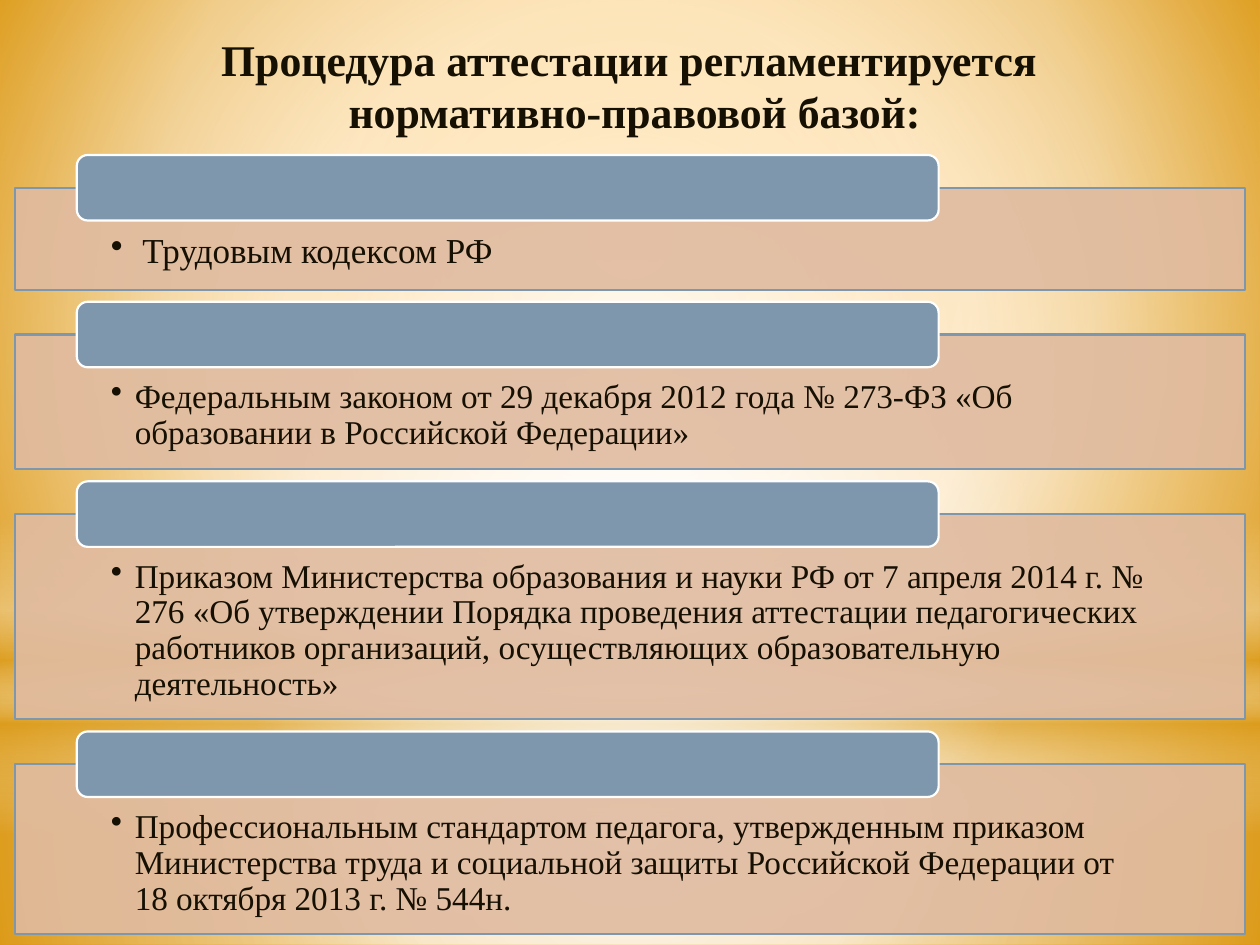
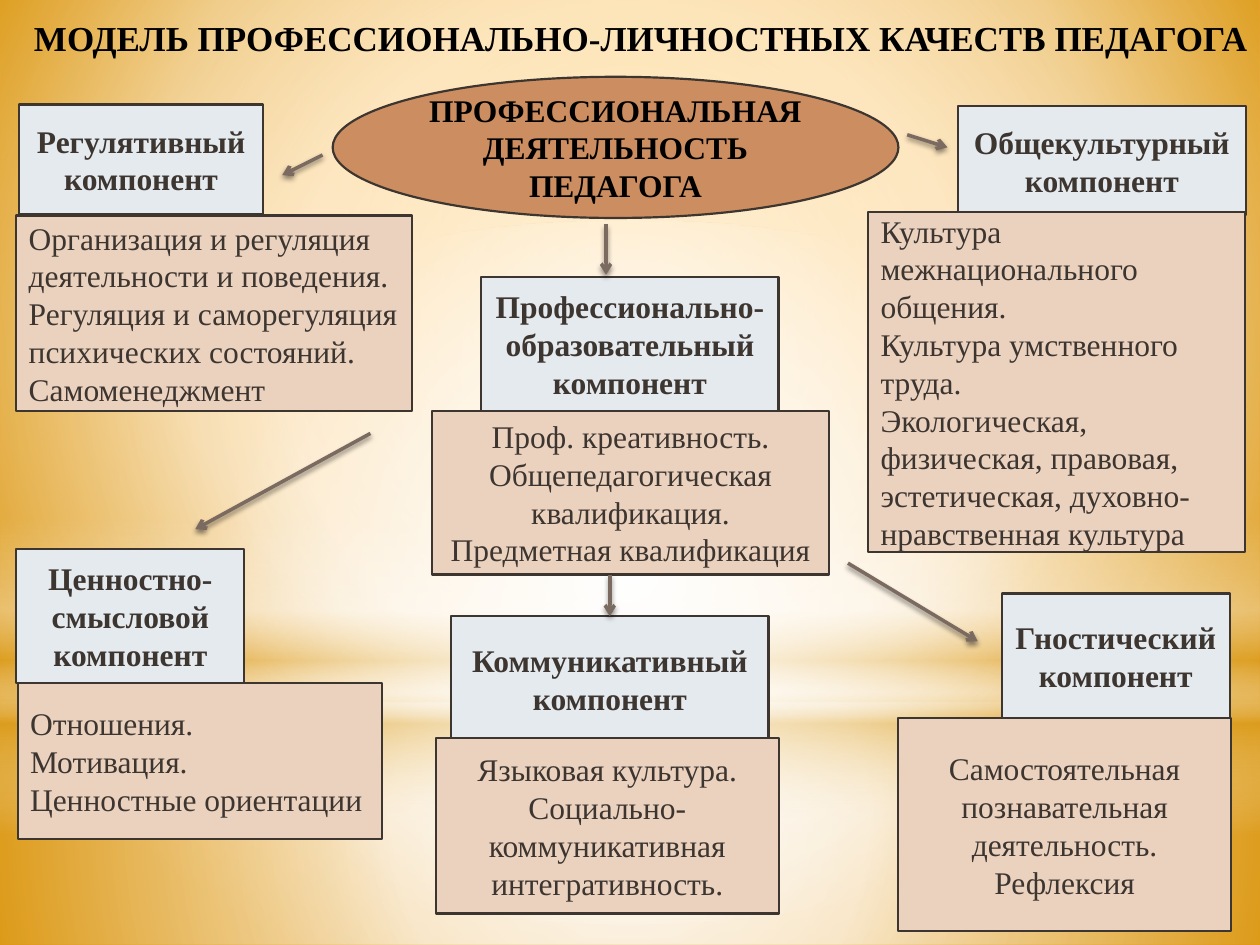
from pptx import Presentation
from pptx import util as u
from pptx.dml.color import RGBColor
from pptx.enum import shapes, text
from pptx.oxml import ns
from lxml import etree

COLUMNS, ROWS = 100, 75
FONT = "Times New Roman"
WHITE = RGBColor(0xFF, 0xFF, 0xFF)
BLACK = RGBColor(0x00, 0x00, 0x00)
INK = RGBColor(0x16, 0x10, 0x03)
BROWN = RGBColor(0x3D, 0x35, 0x30)
ARROW = RGBColor(0x7A, 0x6A, 0x60)
GOLD = RGBColor(0xDC, 0x9E, 0x1F)
AMBER = RGBColor(0xFF, 0xA6, 0x07)
CREAM = RGBColor(0xF9, 0xCD, 0x88)
OCHRE = RGBColor(0xE0, 0x8E, 0x02)
STEEL = RGBColor(0x7E, 0x97, 0xAD)
PEACH = RGBColor(0xE0, 0xBB, 0xA0)
COPPER = RGBColor(0xCC, 0x8E, 0x60)
PALE_BLUE = RGBColor(0xE5, 0xEA, 0xEF)
PALE_PEACH = RGBColor(0xEB, 0xD2, 0xBF)

RECTANGLE = shapes.MSO_SHAPE.RECTANGLE
ROUNDED = shapes.MSO_SHAPE.ROUNDED_RECTANGLE
OVAL = shapes.MSO_SHAPE.OVAL
LEFT, CENTER, RIGHT = text.PP_ALIGN.LEFT, text.PP_ALIGN.CENTER, text.PP_ALIGN.RIGHT
TOP, MIDDLE = text.MSO_ANCHOR.TOP, text.MSO_ANCHOR.MIDDLE

# Gradient stops: position %, colour, opacity %
BACKDROP = [(0, AMBER, 100), (60, CREAM, 100), (100, OCHRE, 100)]
BACKDROP_FOCUS = (20, 10, 20, 60)
MIDDLE_FOCUS = (50, 50, 50, 50)
BANDS = [
    (RECTANGLE, (0, 55.8, 100, 19.2), [(0, WHITE, 91), (37, WHITE, 76), (100, GOLD, 79)], MIDDLE_FOCUS),
    (RECTANGLE, (0, 0, 100, 55.8), [(0, WHITE, 89), (48, WHITE, 62), (100, GOLD, 79)], MIDDLE_FOCUS),
    (RECTANGLE, (0, 41.2, 100, 25),
     [(0, WHITE, 0), (29, WHITE, 30), (45, GOLD, 40), (55, WHITE, 26), (65, GOLD, 60), (100, WHITE, 0)], None),
    (OVAL, (0, 17.5, 100, 55.8), [(0, WHITE, 100), (56, WHITE, 0)], MIDDLE_FOCUS),
]

TITLE = {"size": u.Pt(25), "bold": True, "color": INK}
MODEL_TITLE = {"size": u.Pt(20), "bold": True, "color": BLACK}
HUB = {"size": u.Pt(18), "bold": True, "color": BLACK}
HEADING = {"size": u.Pt(18), "bold": True, "color": BROWN}
BODY = {"size": u.Pt(18), "bold": False, "color": BROWN}

# Panel height, text size, bullet indent, text
REGULATIONS = [
    (8.1, 20, 2.5, "Трудовым кодексом РФ"),
    (10.7, 19, 1.9, "Федеральным законом от 29 декабря 2012 года № 273-ФЗ «Об образовании "
                    "в Российской Федерации»"),
    (16.3, 19, 1.9, "Приказом Министерства образования и науки РФ от 7 апреля 2014 г. № 276 "
                    "«Об утверждении Порядка проведения аттестации педагогических работников "
                    "организаций, осуществляющих образовательную деятельность»"),
    (13.5, 19, 1.9, "Профессиональным стандартом педагога, утвержденным приказом Министерства "
                    "труда и социальной защиты Российской Федерации от 18 октября 2013 г. № 544н."),
]

# Heading, heading box, body box, body alignment, body paragraphs
COMPONENTS = [
    ("Регулятивный компонент", (1.5, 8.3, 19.4, 8.7), (1.3, 17.1, 31.4, 15.5), LEFT,
     ["Организация и регуляция деятельности и поведения.",
      "Регуляция и саморегуляция психических состояний.", "Самоменеджмент"]),
    ("Ценностно-смысловой компонент", (1.3, 43.6, 18.1, 10.6), (1.4, 54.2, 28.9, 12.4), LEFT,
     ["Отношения.", "Мотивация.", "Ценностные ориентации"]),
    ("Коммуникативный компонент", (35.8, 48.9, 25.2, 9.9), (34.6, 58.6, 27.2, 13.9), CENTER,
     ["Языковая культура.", "Социально-коммуникативная интегративность."]),
    ("Гностический компонент", (79.5, 47.1, 18.1, 9.9), (71.3, 57, 26.4, 16.9), CENTER,
     ["Самостоятельная познавательная деятельность.", "Рефлексия"]),
    ("Профессионально-образовательный компонент", (38.2, 22, 23.6, 10.6), (34.3, 32.6, 31.5, 13), CENTER,
     ["Проф. креативность.", "Общепедагогическая квалификация.", "Предметная квалификация"]),
    ("Общекультурный компонент", (76, 8.4, 22.9, 8.7), (68.9, 16.8, 29.9, 27), LEFT,
     ["Культура межнационального общения.", "Культура умственного труда.",
      "Экологическая, физическая, правовая, эстетическая, духовно-нравственная культура"]),
]

ARROWS = [
    (25.6, 12.3, 22.4, 13.9), (72, 10.7, 75.2, 11.7), (48.1, 17.8, 48.1, 21.8),
    (29.4, 34.4, 15.5, 42), (67.3, 44.7, 77.6, 50.9), (48.4, 45.6, 48.4, 48.9),
]


def add_element(parent, tag, **attributes):
    return etree.SubElement(parent, ns.qn(tag), {name: str(value) for name, value in attributes.items()})


def add_color(parent, color, opacity):
    element = add_element(parent, "a:srgbClr", val=color)
    if opacity < 100:
        add_element(element, "a:alpha", val=opacity * 1000)
    return element


def set_gradient(fill, owner, stops, focus):
    """Fill with a circular gradient around focus, or a vertical one without it."""
    fill.gradient()
    gradient = next(owner.iter(ns.qn("a:gradFill")))
    for child in list(gradient):
        gradient.remove(child)
    stop_list = add_element(gradient, "a:gsLst")
    for position, color, opacity in stops:
        add_color(add_element(stop_list, "a:gs", pos=position * 1000), color, opacity)
    if focus:
        circle = add_element(gradient, "a:path", path="circle")
        add_element(circle, "a:fillToRect", **{side: share * 1000 for side, share in zip("ltrb", focus)})
    else:
        add_element(gradient, "a:lin", ang=90 * 60000, scaled=0)


class Deck:
    def __init__(self):
        self.presentation = Presentation()
        self.presentation.slide_width = u.Inches(10)
        self.presentation.slide_height = u.Inches(7.5)
        self.slide = None

    def x(self, columns):
        return round(self.presentation.slide_width * columns / COLUMNS)

    def y(self, rows):
        return round(self.presentation.slide_height * rows / ROWS)

    def place(self, box):
        left, top, width, height = box
        return self.x(left), self.y(top), self.x(width), self.y(height)

    def add_slide(self):
        self.slide = self.presentation.slides.add_slide(self.presentation.slide_layouts[6])
        set_gradient(self.slide.background.fill, self.slide.element, BACKDROP, BACKDROP_FOCUS)
        for kind, box, stops, focus in BANDS:
            band = self.add_shape(kind, box)
            set_gradient(band.fill, band.element, stops, focus)

    def add_shape(self, kind, box, fill=None, line=None, opacity=100):
        shape = self.slide.shapes.add_shape(kind, *self.place(box))
        shape.shadow.inherit = False
        if fill is not None:
            shape.fill.solid()
            shape.fill.fore_color.rgb = fill
            if opacity < 100:
                color = next(shape.element.spPr.iter(ns.qn("a:srgbClr")))
                add_element(color, "a:alpha", val=opacity * 1000)
        if line is None:
            shape.line.fill.background()
        else:
            shape.line.color.rgb = line
            shape.line.width = u.Pt(1.25)
        return shape

    def add_text(self, shape, paragraphs, style, align=CENTER, anchor=MIDDLE, **frame_format):
        frame = shape.text_frame
        for name, value in {"word_wrap": True, "vertical_anchor": anchor, **frame_format}.items():
            setattr(frame, name, value)
        for index, words in enumerate(paragraphs):
            paragraph = frame.add_paragraph() if index else frame.paragraphs[0]
            paragraph.alignment = align
            run = paragraph.add_run()
            run.text = words
            run.font.name = FONT
            for name, value in style.items():
                if name == "color":
                    run.font.color.rgb = value
                else:
                    setattr(run.font, name, value)

    def add_title(self, box, paragraphs, style, align):
        self.add_text(self.slide.shapes.add_textbox(*self.place(box)), paragraphs, style, align, TOP)

    def add_bullet(self, shape, words, size, indent):
        self.add_text(shape, [words], {"size": u.Pt(size), "color": INK}, LEFT, TOP,
                      margin_left=self.x(7.6), margin_right=self.x(7.6),
                      margin_top=self.y(3.6), margin_bottom=self.y(1.5))
        paragraph = shape.text_frame.paragraphs[0]
        paragraph.line_spacing = 0.9
        properties = paragraph._p.get_or_add_pPr()
        properties.set("marL", str(self.x(indent)))
        properties.set("indent", str(-self.x(indent)))
        add_element(properties, "a:buChar", char="•")

    def add_arrow(self, start_x, start_y, end_x, end_y):
        arrow = self.slide.shapes.add_connector(
            shapes.MSO_CONNECTOR.STRAIGHT,
            self.x(start_x), self.y(start_y), self.x(end_x), self.y(end_y))
        arrow.line.color.rgb = ARROW
        arrow.line.width = u.Pt(2)
        properties = arrow.element.spPr
        add_element(properties.find(ns.qn("a:ln")), "a:tailEnd", type="arrow")
        effects = add_element(properties, "a:effectLst")
        shadow = add_element(effects, "a:outerShdw", blurRad=u.Pt(3.1), dist=u.Pt(1.8),
                             dir=90 * 60000, rotWithShape=0)
        add_color(shadow, BLACK, 45)


def build_regulations(deck):
    deck.add_slide()
    deck.add_title((4.3, 2.1, 92.1, 9.4),
                   ["Процедура аттестации регламентируется ", "нормативно-правовой базой:"],
                   TITLE, CENTER)
    top, gap = 14.9, 3.55
    for height, size, indent, words in REGULATIONS:
        panel = deck.add_shape(RECTANGLE, (1.2, top, 97.6, height), PEACH, STEEL, opacity=90)
        deck.add_bullet(panel, words, size, indent)
        deck.add_shape(ROUNDED, (6.1, top - 2.6, 68.4, 5.2), STEEL, WHITE)
        top += height + gap


def build_model(deck):
    deck.add_slide()
    deck.add_title((1.6, 0.8, 98.4, 8.4),
                   ["МОДЕЛЬ ПРОФЕССИОНАЛЬНО-ЛИЧНОСТНЫХ КАЧЕСТВ ПЕДАГОГА"], MODEL_TITLE, RIGHT)
    hub = deck.add_shape(OVAL, (26.4, 6.1, 44.9, 11.2), COPPER, BROWN)
    deck.add_text(hub, ["ПРОФЕССИОНАЛЬНАЯ ДЕЯТЕЛЬНОСТЬ ПЕДАГОГА"], HUB)
    for heading, heading_box, body_box, align, paragraphs in COMPONENTS:
        deck.add_text(deck.add_shape(RECTANGLE, heading_box, PALE_BLUE, BROWN), [heading], HEADING)
        deck.add_text(deck.add_shape(RECTANGLE, body_box, PALE_PEACH, BROWN), paragraphs, BODY, align)
    for arrow in ARROWS:
        deck.add_arrow(*arrow)


def main():
    deck = Deck()
    build_regulations(deck)
    build_model(deck)
    deck.presentation.save("out.pptx")


if __name__ == "__main__":
    main()
